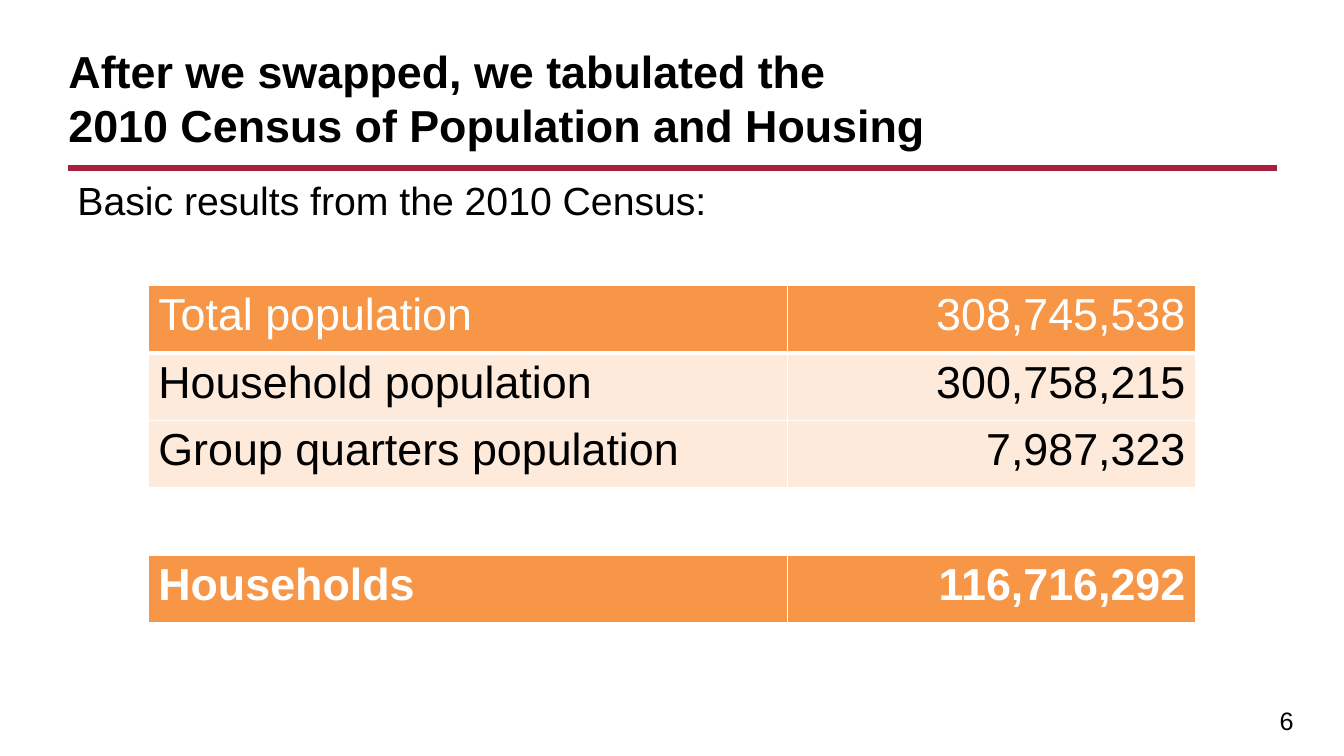
from lxml.etree import SubElement
from pptx import Presentation
from pptx.dml.color import RGBColor
from pptx.enum.shapes import MSO_CONNECTOR
from pptx.enum.text import MSO_ANCHOR, PP_ALIGN
from pptx.oxml.ns import qn
from pptx.util import Inches, Pt

BLACK, WHITE, CRIMSON = "000000", "FFFFFF", "A9203D"
ORANGE, PEACH = "F79646", "FDEADA"

# label, value, fill, text colour, bold
CENSUS_ROWS = [
    ("Total population", "308,745,538", ORANGE, WHITE, False),
    ("Household population", "300,758,215", PEACH, BLACK, False),
    ("Group quarters population", "7,987,323", PEACH, BLACK, False),
    ("", "", WHITE, BLACK, False),
    ("Households", "116,716,292", ORANGE, WHITE, True),
]


def rgb(color):
    return RGBColor.from_string(color)


def write(tf, text, size=32, color=BLACK, bold=False, align=PP_ALIGN.LEFT, spacing=None):
    p = tf.paragraphs[0]
    p.text = text
    p.alignment = align
    p.line_spacing = spacing
    for font in [p.font] + [r.font for r in p.runs]:
        font.name, font.size, font.bold = "Arial", Pt(size), bold
        font.color.rgb = rgb(color)


def text_box(s, box, text, anchor=MSO_ANCHOR.TOP, **fmt):
    tf = s.shapes.add_textbox(*map(Inches, box)).text_frame
    tf.word_wrap = True
    tf.vertical_anchor = anchor
    write(tf, text, **fmt)


def rule(s, left, top, width):
    line = s.shapes.add_connector(
        MSO_CONNECTOR.STRAIGHT, *map(Inches, (left, top, left + width, top)))
    line.line.color.rgb = rgb(CRIMSON)
    line.line.width = Pt(4.5)
    SubElement(line._element.spPr, qn("a:effectLst"))


def cell_borders(cell, bottom):
    tc_pr = cell._tc.get_or_add_tcPr()
    for side, width in (("L", 1), ("R", 1), ("T", 1), ("B", bottom)):
        ln = SubElement(tc_pr, qn(f"a:ln{side}"), w=str(Pt(width)))
        SubElement(SubElement(ln, qn("a:solidFill")), qn("a:srgbClr"), val=WHITE)


def census_table(s, box, rows, label_share):
    left, top, width, height = map(Inches, box)
    table = s.shapes.add_table(len(rows), 2, left, top, width, height).table
    table.first_row = table.horz_banding = False
    table.columns[0].width = int(width * label_share)
    table.columns[1].width = width - table.columns[0].width
    for i, (label, value, fill, color, bold) in enumerate(rows):
        for j, (text, align) in enumerate(((label, PP_ALIGN.LEFT), (value, PP_ALIGN.RIGHT))):
            cell = table.cell(i, j)
            cell_borders(cell, bottom=3 if i == 0 else 1)
            cell.fill.solid()
            cell.fill.fore_color.rgb = rgb(fill)
            write(cell.text_frame, text, color=color, bold=bold, align=align)


def main():
    prs = Presentation()
    prs.slide_width, prs.slide_height = Inches(13.33), Inches(7.5)
    s = prs.slides.add_slide(prs.slide_layouts[6])
    rule(s, 0.67, 1.67, 12)
    text_box(s, (0.58, 0.3, 12.08, 1.25),
             "After we swapped, we tabulated the\n2010 Census of Population and Housing",
             anchor=MSO_ANCHOR.BOTTOM, bold=True)
    census_table(s, (1.47, 2.83, 10.39, 3.35), CENSUS_ROWS, label_share=0.61)
    text_box(s, (0.67, 1.75, 12, 1.83), "Basic results from the 2010 Census:",
             size=28, spacing=0.9)
    text_box(s, (10.1, 6.95, 2.83, 0.39), "6", size=18, align=PP_ALIGN.RIGHT)
    prs.save("out.pptx")


if __name__ == "__main__":
    main()
